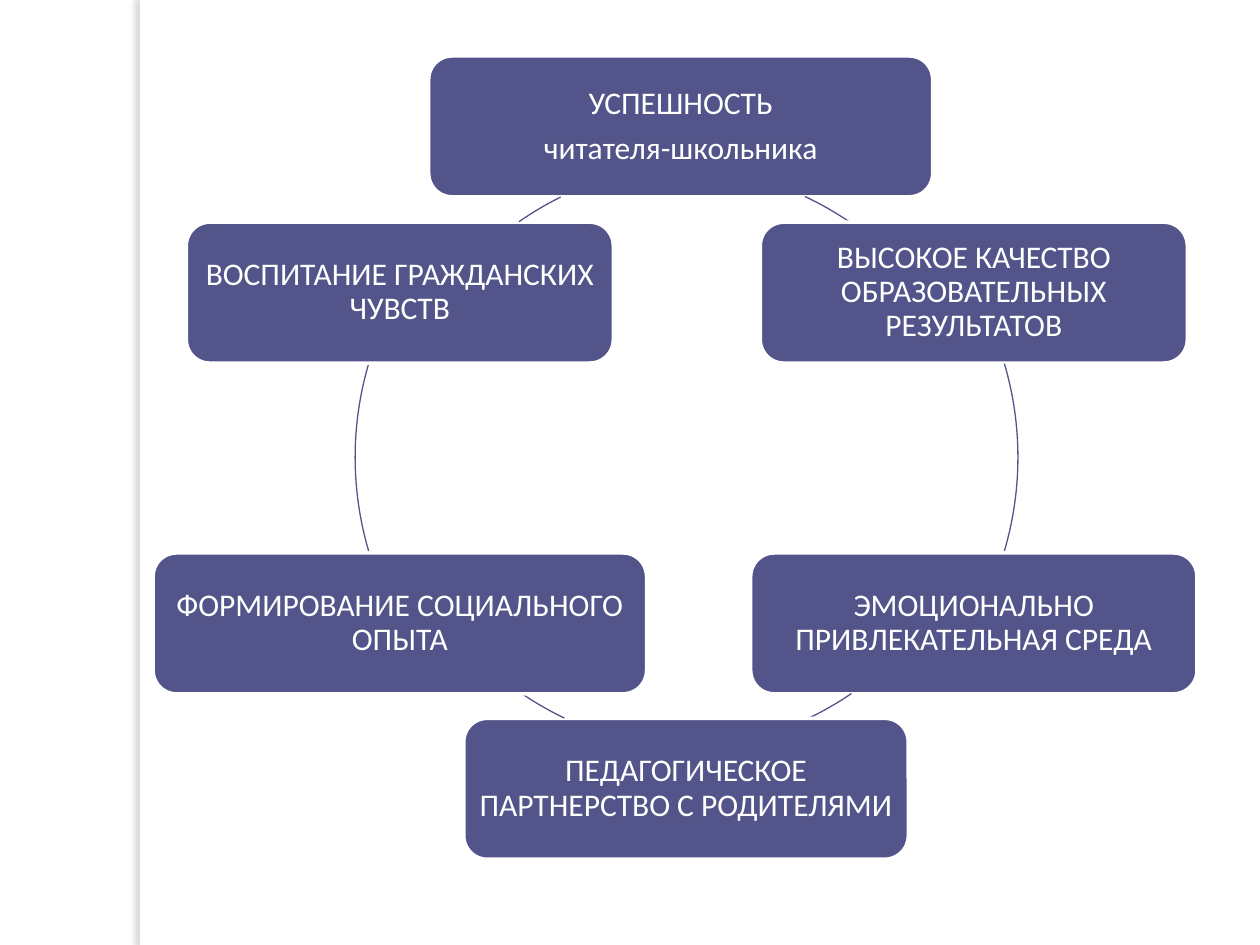
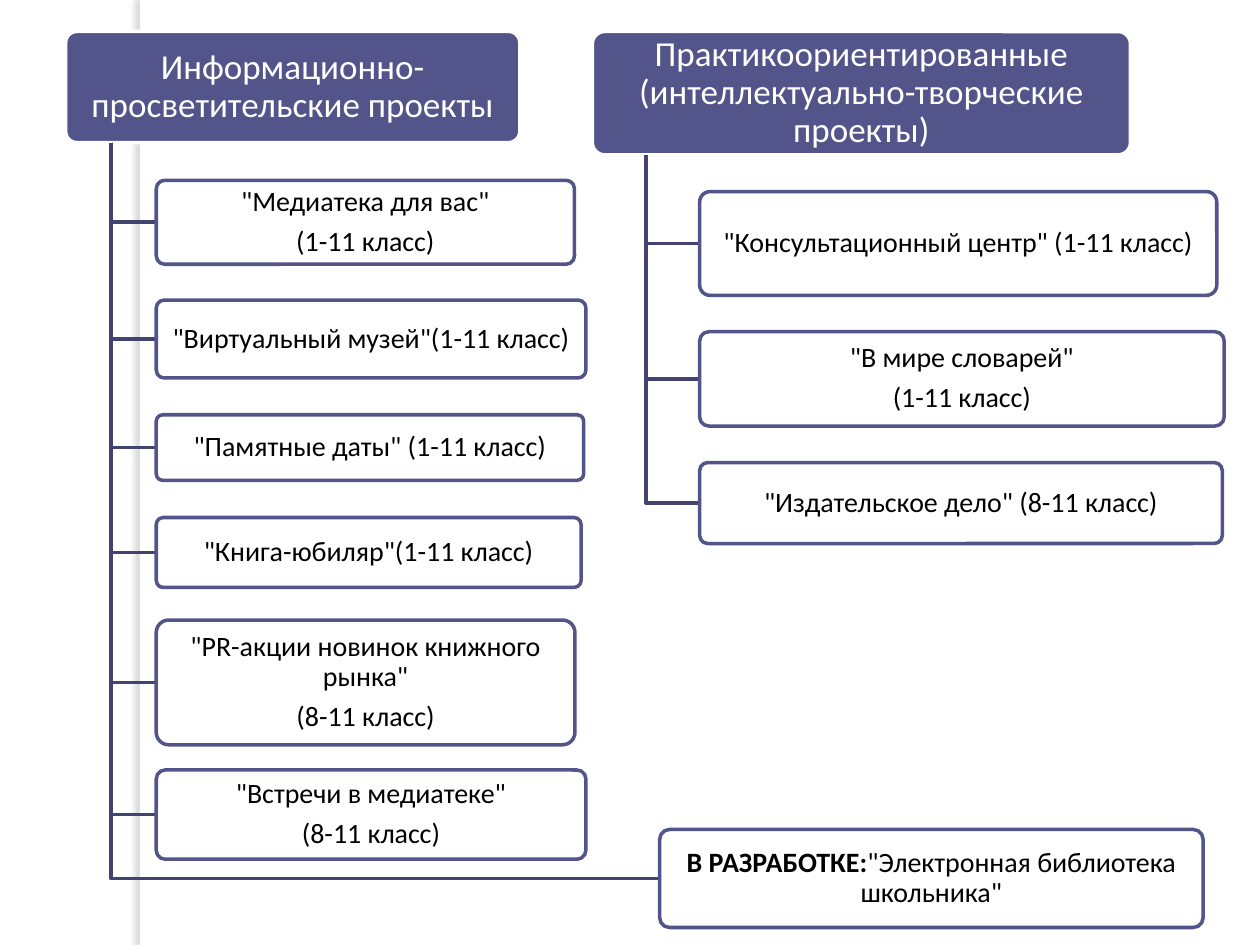
from pptx import Presentation
from pptx.dml.color import RGBColor
from pptx.enum.shapes import MSO_SHAPE
from pptx.enum.text import MSO_ANCHOR, PP_ALIGN
from pptx.oxml import parse_xml
from pptx.oxml.ns import nsdecls, qn
from pptx.util import Pt

RECT = MSO_SHAPE.RECTANGLE
ROUND = MSO_SHAPE.ROUNDED_RECTANGLE
ARC = MSO_SHAPE.ARC
MIDDLE = MSO_ANCHOR.MIDDLE
CENTER = PP_ALIGN.CENTER

FONT = "Calibri"
HEX = {"main": "53548A", "line": "42436F", "white": "FFFFFF",
       "black": "000000", "shade": "6E6E6E"}
RGB = {name: RGBColor.from_string(code) for name, code in HEX.items()}


def add_box(slide, text, place, size, pad, fill="main", line="white", ink="white", lead=""):
    box = slide.shapes.add_shape(ROUND, *map(Pt, place))
    box.shadow.inherit = False
    box.fill.solid()
    box.fill.fore_color.rgb = RGB[fill]
    box.line.color.rgb = RGB[line]
    box.line.width = Pt(2)
    frame = box.text_frame
    frame.word_wrap = True
    frame.vertical_anchor = MIDDLE
    frame.margin_left = frame.margin_right = Pt(pad[0])
    frame.margin_top = frame.margin_bottom = Pt(pad[1])
    frame.text = lead or text
    if lead:
        frame.paragraphs[0].add_run().text = text
    for para in frame.paragraphs:
        para.alignment = CENTER
        para.line_spacing = 0.9
        para.space_after = Pt(0.35 * size)
        for run in para.runs:
            run.font.name = FONT
            run.font.size = Pt(size)
            run.font.color.rgb = RGB[ink]
            run.font.bold = run.text == lead
    return box


deck = Presentation()
deck.slide_width, deck.slide_height = Pt(720), Pt(540)
blank = deck.slide_layouts[6]
ring = deck.slides.add_slide(blank)
tree = deck.slides.add_slide(blank)

band = ring.shapes.add_shape(RECT, Pt(80), 0, Pt(6), Pt(540))
band.fill.solid()
band.fill.fore_color.rgb = RGB["white"]
band.line.fill.background()
band.element.spPr.append(parse_xml(
    f'<a:effectLst {nsdecls("a")}><a:outerShdw blurRad="{Pt(3)}" dist="{Pt(3)}" dir="10800000">'
    f'<a:srgbClr val="{HEX["shade"]}"><a:alpha val="25000"/></a:srgbClr>'
    '</a:outerShdw></a:effectLst>'))
deck.slide_master.element.cSld.spTree.append(band.element)

NODES = [
    ("УСПЕШНОСТЬ\nчитателя-школьника", 245, 32, 288),
    ("ВЫСОКОЕ КАЧЕСТВО ОБРАЗОВАТЕЛЬНЫХ РЕЗУЛЬТАТОВ", 434.5, 127, 244),
    ("ЭМОЦИОНАЛЬНО ПРИВЛЕКАТЕЛЬНАЯ СРЕДА", 429, 316, 255),
    ("ПЕДАГОГИЧЕСКОЕ ПАРТНЕРСТВО С РОДИТЕЛЯМИ", 265, 410.5, 254),
    ("ФОРМИРОВАНИЕ СОЦИАЛЬНОГО ОПЫТА", 87.5, 316, 282),
    ("ВОСПИТАНИЕ ГРАЖДАНСКИХ ЧУВСТВ", 106.5, 127, 244),
]
ARCS = [
    (190, 94.3, 295.2, 304), (203, 72, 343.6, 16.4), (190.8, 50.4, 55.8, 64.3),
    (215.3, 50.4, 115.7, 124.2), (203, 72, 163.6, 196.4), (215.3, 92.9, 235.2, 243.6),
]
for (text, left, top, width), (x, y, start, end) in zip(NODES, ARCS):
    add_box(ring, text, (left, top, width, 80.5), 18, (5, 5))
    arc = ring.shapes.add_shape(ARC, Pt(x), Pt(y), Pt(378.7), Pt(378.7))
    arc.shadow.inherit = False
    arc.adjustments[0] = start * 0.6
    arc.adjustments[1] = end * 0.6
    arc.fill.background()
    arc.line.color.rgb = RGB["main"]
    arc.line.width = Pt(0.75)

GROUPS = [
    ("Информационно-просветительские проекты", 37.5, 259.5, 63.5, [
        ("", "\"Медиатека для вас\"\n(1-11 класс)", 89.3, 103, 239, 48),
        ("", "\"Виртуальный музей\"(1-11 класс)", 89.3, 171.5, 245.5, 44.5),
        ("", "\"Памятные даты\" (1-11 класс)", 89.3, 237, 244.3, 37.5),
        ("", "\"Книга-юбиляр\"(1-11 класс)", 89.3, 295.7, 242.8, 40),
        ("", "\"PR-акции новинок книжного рынка\"\n(8-11 класс)", 89.3, 354.3, 239.3, 71.3),
        ("", "\"Встречи в медиатеке\"\n(8-11 класс)", 89.3, 440, 245.5, 51),
        ("В РАЗРАБОТКЕ:", "\"Электронная библиотека школьника\"", 377, 474, 310.5, 56),
    ]),
    ("Практикоориентированные (интеллектуально-творческие проекты)", 338.5, 307.5, 70.5, [
        ("", "\"Консультационный центр\" (1-11 класс)", 399.8, 109.5, 295.5, 59.3),
        ("", "\"В мире словарей\"\n(1-11 класс)", 399.8, 189.5, 299.8, 54),
        ("", "\"Издательское дело\" (8-11 класс)", 399.8, 264.3, 298.7, 46.3),
    ]),
]
for title, left, width, height, items in GROUPS:
    head = add_box(tree, title, (left, 18, width, height), 20, (3, 2))
    head.adjustments[0] = 0.1
    trunk = left + width / 10
    for lead, text, x, y, wide, high in items:
        mid = y + high / 2
        path = tree.shapes.build_freeform(Pt(trunk), Pt(18 + height))
        path.add_line_segments([(Pt(trunk), Pt(mid)), (Pt(x), Pt(mid))], close=False)
        link = path.convert_to_shape()
        link.shadow.inherit = False
        link.fill.background()
        link.line.color.rgb = RGB["line"]
        link.line.width = Pt(2)
        card = add_box(tree, text, (x, y, wide, high), 16, (2, 1.5),
                       "white", "main", "black", lead)
        card.adjustments[0] = 0.1
        tint = next(card.element.iter(qn("a:srgbClr")))
        tint.append(parse_xml(f'<a:alpha {nsdecls("a")} val="90000"/>'))

deck.save("out.pptx")
